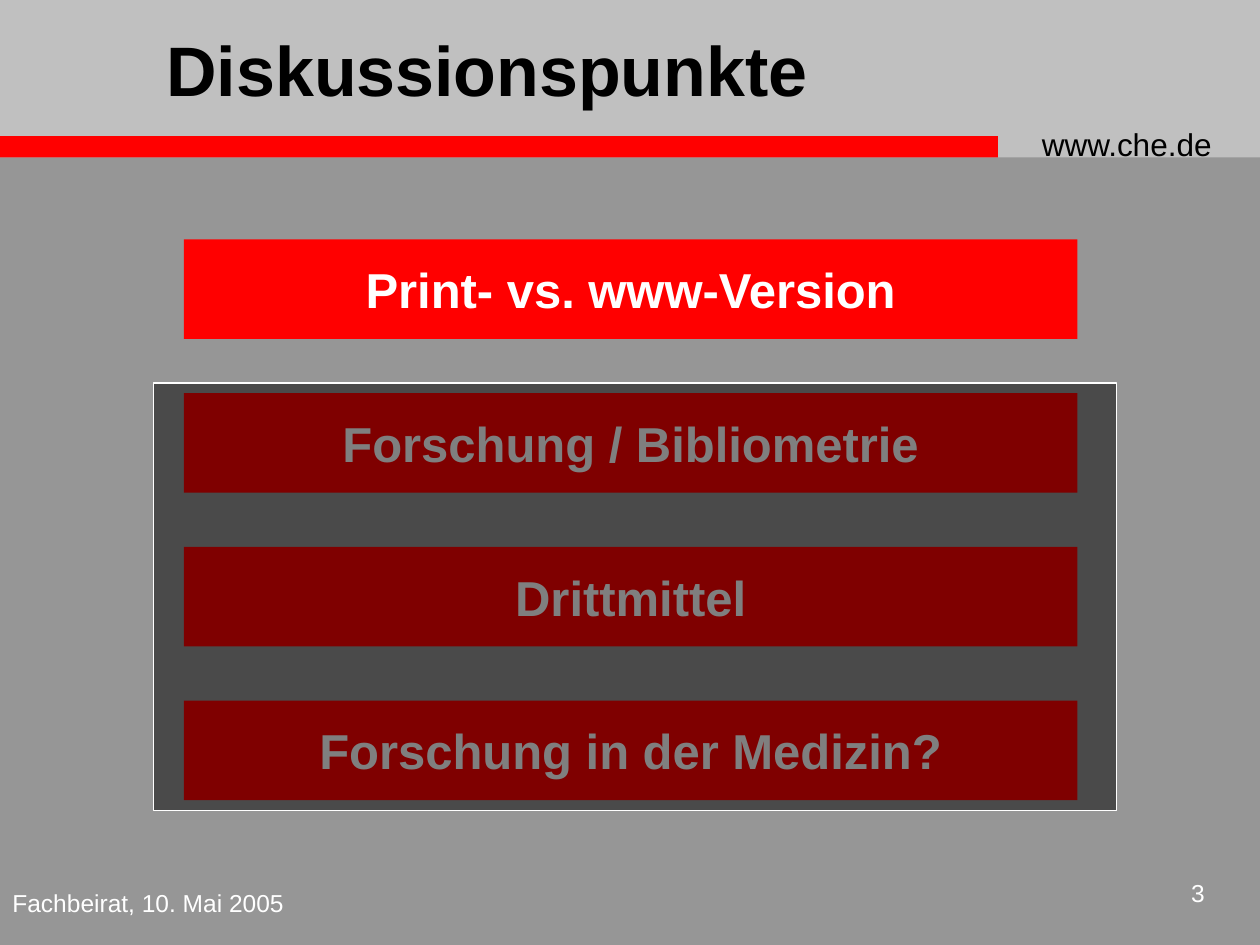
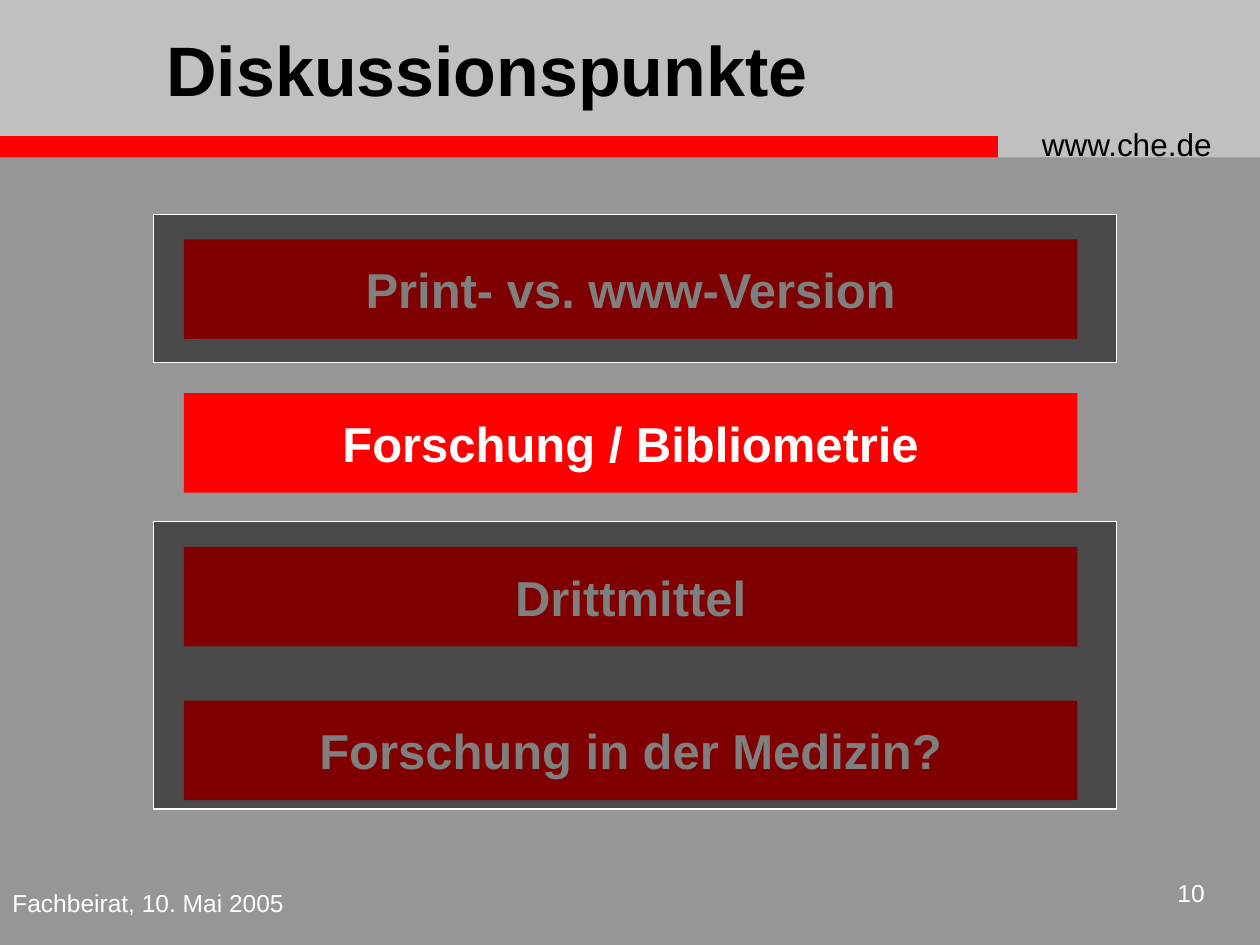
import dataclasses

import pptx
import pptx.dml.color
import pptx.enum.shapes
import pptx.enum.text
import pptx.oxml.ns
import pptx.util
from lxml import etree

Inches = pptx.util.Inches
Align = pptx.enum.text.PP_ALIGN
Anchor = pptx.enum.text.MSO_ANCHOR


@dataclasses.dataclass(frozen=True)
class Theme:
    font: str = "Arial"
    background: str = "969696"
    header: str = "C0C0C0"
    accent: str = "FF0000"
    dark: str = "000000"
    light: str = "FFFFFF"
    title_size: int = 40
    topic_size: int = 28
    address_size: int = 18
    footer_size: int = 14
    outline_width: float = 0.75
    veil_opacity: int = 50


THEME = Theme()
TITLE = "Diskussionspunkte"
ADDRESS = "www.che.de"
EVENT = "Fachbeirat, 10. Mai 2005"
TOPICS = [
    "Print- vs. www-Version",
    "Forschung / Bibliometrie",
    "Drittmittel",
    "Forschung in der Medizin?",
]
TOPIC_BOX = (1.46, 1.9, 7.09, 0.79)
TOPIC_STEP = 1.22
VEIL_LEFT, VEIL_WIDTH = 1.22, 7.64
PAGES = [
    ("3", [(3.04, 3.39)]),
    ("10", [(4.14, 2.28), (1.7, 1.18)]),
]


def color(code):
    return pptx.dml.color.RGBColor.from_string(code)


def place(box):
    return [Inches(length) for length in box]


def write(frame, text, size, ink, bold=False, align=Align.LEFT, anchor=Anchor.TOP, wrap=True):
    frame.word_wrap = wrap
    frame.auto_size = pptx.enum.text.MSO_AUTO_SIZE.NONE
    frame.vertical_anchor = anchor
    para = frame.paragraphs[0]
    para.alignment = align
    span = para.add_run()
    span.text = text
    span.font.name = THEME.font
    span.font.size = pptx.util.Pt(size)
    span.font.bold = bold
    span.font.color.rgb = color(ink)


def add_text(page, box, text, size, ink, **options):
    label = page.shapes.add_textbox(*place(box))
    write(label.text_frame, text, size, ink, **options)
    return label


def add_block(page, box, fill):
    block = page.shapes.add_shape(pptx.enum.shapes.MSO_SHAPE.RECTANGLE, *place(box))
    block.shadow.inherit = False
    block.fill.solid()
    block.fill.fore_color.rgb = color(fill)
    block.line.fill.background()
    return block


def move_header_to_layout(page):
    header = [
        add_block(page, (0, 0, 10, 1.25), THEME.header),
        add_block(page, (-0.01, 1.08, 7.93, 0.17), THEME.accent),
        add_text(page, (8.17, 0.94, 1.75, 0.4), ADDRESS, THEME.address_size, THEME.dark),
    ]
    tree = page.slide_layout.shapes.element
    for index, part in enumerate(header):
        part.element.xpath("./p:nvSpPr/p:cNvPr")[0].set("id", str(100 + index))
        tree.insert(2 + index, part.element)


def add_title(page, box):
    title = page.shapes.title
    title.left, title.top, title.width, title.height = place(box)
    write(title.text_frame, TITLE, THEME.title_size, THEME.dark, bold=True, anchor=Anchor.MIDDLE)


def add_footer(page, number):
    add_text(page, (0, 7, 2.56, 0.5), EVENT, THEME.footer_size, THEME.light)
    add_text(page, (9.08, 6.92, 0.58, 0.42), number, THEME.footer_size, THEME.light, align=Align.RIGHT)


def add_topics(page, box):
    left, top, width, height = box
    for row, topic in enumerate(TOPICS):
        bar = add_block(page, (left, top + row * TOPIC_STEP, width, height), THEME.accent)
        write(bar.text_frame, topic, THEME.topic_size, THEME.light, bold=True,
              align=Align.CENTER, anchor=Anchor.MIDDLE, wrap=False)


def add_veil(page, box):
    veil = add_block(page, box, THEME.dark)
    veil.line.color.rgb = color(THEME.light)
    veil.line.width = pptx.util.Pt(THEME.outline_width)
    shade = veil.element.spPr.find(".//" + pptx.oxml.ns.qn("a:srgbClr"))
    alpha = etree.SubElement(shade, pptx.oxml.ns.qn("a:alpha"))
    alpha.set("val", str(THEME.veil_opacity * 1000))


def add_agenda_page(deck, layout, number, veils):
    page = deck.slides.add_slide(layout)
    add_title(page, (1.22, 0, 6.22, 1.08))
    add_footer(page, number)
    add_topics(page, TOPIC_BOX)
    for top, height in veils:
        add_veil(page, (VEIL_LEFT, top, VEIL_WIDTH, height))
    return page


def main():
    deck = pptx.Presentation()
    deck.slide_width, deck.slide_height = Inches(10), Inches(7.5)
    backdrop = deck.slide_master.background.fill
    backdrop.solid()
    backdrop.fore_color.rgb = color(THEME.background)
    layout = deck.slide_layouts.get_by_name("Title Only")
    pages = [add_agenda_page(deck, layout, number, veils) for number, veils in PAGES]
    move_header_to_layout(pages[0])
    deck.save("out.pptx")


if __name__ == "__main__":
    main()
